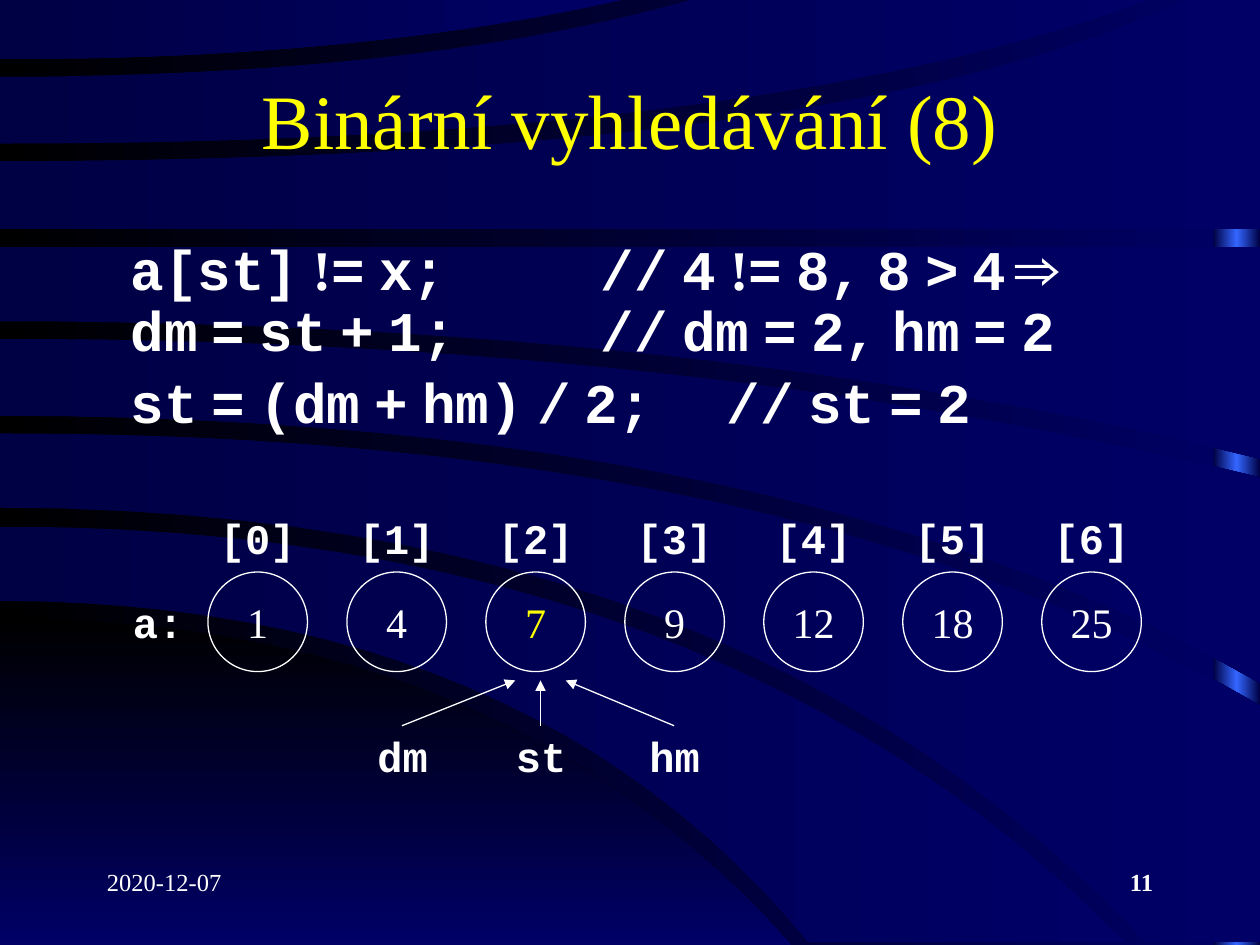
import copy

import pptx
import pptx.dml.color
import pptx.enum.shapes
import pptx.enum.text
import pptx.oxml
import pptx.oxml.ns
import pptx.util

COLOURS = {"black": "000000", "navy": "000066", "dusk": "000044",
           "glow": "3366FF", "white": "FFFFFF", "yellow": "FFFF00"}
SERIF, MONO = "Times New Roman", "Courier New"
COLUMNS, ROWS = 100, 75
ALIGN = pptx.enum.text.PP_ALIGN
ANCHOR = pptx.enum.text.MSO_ANCHOR
SHAPE = pptx.enum.shapes.MSO_SHAPE
qn = pptx.oxml.ns.qn


def colour(name):
    return pptx.dml.color.RGBColor.from_string(COLOURS[name])


def curve(start, bend, right, end, steps=24):
    """Points of a curve leaving the left edge level at row start, with its
    control point at column bend, and ending at column right, row end."""
    shares = [step / steps for step in range(steps + 1)]
    return [(2 * t * (1 - t) * bend + t * t * right, start + t * t * (end - start))
            for t in shares]


class SlideBuilder:
    """Draws on one slide; all lengths are columns and rows of the grid."""

    def __init__(self, deck):
        self.deck = deck
        self.page = deck.slides.add_slide(deck.slide_layouts[6])

    def place(self, *lengths):
        units = (self.deck.slide_width / COLUMNS, self.deck.slide_height / ROWS)
        return [round(length * units[i % 2]) for i, length in enumerate(lengths)]

    def gradient(self, fill, names, angle=0):
        fill.gradient()
        fill.gradient_angle = angle
        for position, (stop, name) in enumerate(zip(fill.gradient_stops, names)):
            stop.color.rgb = colour(name)
            stop.position = position

    def strip(self, at, edge, middle):
        shape = self.page.shapes.add_shape(SHAPE.RECTANGLE, *self.place(*at))
        shape.shadow.inherit = False
        shape.line.fill.background()
        self.gradient(shape.fill, (edge, edge))
        stops = shape._element.spPr.find(".//" + qn("a:gsLst"))
        stops.insert(1, copy.deepcopy(stops[0]))
        centre = shape.fill.gradient_stops[1]
        centre.position = 0.5
        centre.color.rgb = colour(middle)

    def band(self, upper, lower, names=("dusk", "navy"), angle=0):
        top, bottom = curve(*upper), curve(*lower)
        ends = sorted([top[-1], bottom[-1]])
        corner = (ends[1][0], ends[0][1])
        spots = [self.place(*point) for point in [*top, corner, *reversed(bottom)]]
        outline = self.page.shapes.build_freeform(*spots[0], scale=1.0)
        outline.add_line_segments(spots[1:], close=True)
        shape = outline.convert_to_shape()
        shape.shadow.inherit = False
        shape.line.fill.background()
        self.gradient(shape.fill, names, angle)

    def style(self, para, size, font, ink="white", bold=False, align=ALIGN.LEFT):
        para.alignment = align
        para.font.size = pptx.util.Pt(size)
        para.font.name = font
        para.font.bold = bold
        para.font.color.rgb = colour(ink)

    def text(self, at, words, size, font, anchor=ANCHOR.MIDDLE, **look):
        box = self.page.shapes.add_textbox(*self.place(*at))
        frame = box.text_frame
        frame.word_wrap = True
        frame.vertical_anchor = anchor
        frame.text = words
        self.style(frame.paragraphs[0], size, font, **look)

    def label(self, at, words):
        self.text(at, words, 24, MONO, bold=True, align=ALIGN.CENTER)

    def circle(self, at, words, ink):
        shape = self.page.shapes.add_shape(SHAPE.OVAL, *self.place(*at))
        shape.shadow.inherit = False
        shape.fill.background()
        shape.line.color.rgb = colour("white")
        shape.line.width = pptx.util.Pt(0.75)
        frame = shape.text_frame
        frame.margin_left = frame.margin_right = 0
        frame.vertical_anchor = ANCHOR.MIDDLE
        frame.text = words
        self.style(frame.paragraphs[0], 24, SERIF, ink, align=ALIGN.CENTER)

    def code(self, at, blocks):
        """Each block is (tab stop in inches, lines); inner spaces are narrow."""
        box = self.page.shapes.add_textbox(*self.place(*at))
        frame = box.text_frame
        frame.word_wrap = True
        for index, (stop, lines) in enumerate(blocks):
            para = frame.add_paragraph() if index else frame.paragraphs[0]
            self.style(para, 32, MONO, bold=True)
            para.line_spacing = pptx.util.Pt(35)
            para.space_before = pptx.util.Pt(6)
            tabs = pptx.oxml.parse_xml(
                '<a:tabLst xmlns:a="http://schemas.openxmlformats.org/drawingml/2006/main">'
                f'<a:tab pos="{pptx.util.Inches(stop)}" algn="l"/></a:tabLst>')
            para._p.pPr.find(qn("a:defRPr")).addprevious(tabs)
            for number, line in enumerate(lines):
                if number:
                    para.add_line_break()
                first, *others = line.split(" ")
                self.span(para, " " + first, MONO)
                for word in others:
                    mark = "!" if word.startswith("!") else ""
                    self.span(para, " " + mark, SERIF)
                    self.span(para, word[len(mark):], MONO)

    def span(self, para, words, font):
        span = para.add_run()
        span.text = words
        span.font.name = font

    def arrow(self, start, end):
        line = self.page.shapes.add_connector(
            pptx.enum.shapes.MSO_CONNECTOR.STRAIGHT, *self.place(*start, *end))
        line.line.color.rgb = colour("white")
        line.line.width = pptx.util.Pt(0.75)
        stroke = line.line._get_or_add_ln()
        stroke.append(stroke.makeelement(qn("a:tailEnd"), {"type": "triangle"}))
        effects = line._element.spPr
        effects.append(effects.makeelement(qn("a:effectLst"), {}))


# Upper and lower curve of each background band, from the bottom up
CORNER = ((49.1, 40, 62.8, 75), (75, 31, 62.8, 75))
BANDS = [((41.8, 57, 89.3, 74.8), (47.7, 42, 64.2, 74.8)),
         ((34.4, 63, 100, 56), (40.3, 59, 90.9, 74.8)),
         ((26.9, 55, 100, 37.9), (33, 63, 100, 54.2)),
         ((19.6, 50, 100, 19.6), (25.5, 56, 100, 36.4)),
         ((12.8, 68, 94.3, -0.2), (18.2, 50, 100, 18.2)),
         ((6.1, 34, 55.6, -0.2), (11.4, 61, 91.7, -0.2)),
         ((-0.2, 25, 50.1, -0.2), (4.7, 29, 50.1, -0.2))]
CODE = [(4, ["a[st] != x;\t// 4 != 8, 8 > 4 ⇒", "dm = st + 1;\t// dm = 2, hm = 2"]),
        (5, ["st = (dm + hm) / 2;\t// st = 2"])]
VALUES = [1, 4, 7, 9, 12, 18, 25]
MIDDLE = 2
# Pointer name: left of its label, column of its arrow tip
POINTERS = {"dm": (27.6, 40.9), "st": (38.6, 42.9), "hm": (49.2, 44.9)}


def main():
    deck = pptx.Presentation()
    deck.slide_width, deck.slide_height = pptx.util.Inches(10), pptx.util.Inches(7.5)
    slide = SlideBuilder(deck)

    # Backdrop
    slide.gradient(slide.page.background.fill, ("black", "navy"))
    slide.strip((96.3, 0, 3.7, 75), "dusk", "glow")
    slide.band(*CORNER, ("black", "navy"), 270)
    for upper, lower in BANDS:
        slide.band(upper, lower)

    # Title, code and footer
    slide.text((7.5, 4.8, 85, 9.2), "Binární vyhledávání (8)", 44, SERIF,
               ink="yellow", align=ALIGN.CENTER)
    slide.code((6.7, 18.6, 87.5, 16.5), CODE)
    slide.text((7.5, 68.3, 20.8, 5), "2020-12-07", 14, SERIF, ANCHOR.TOP)
    slide.text((71.7, 68.3, 20.8, 5), "11", 14, SERIF, ANCHOR.TOP,
               bold=True, align=ALIGN.RIGHT)

    # Array with its indices
    slide.label((9, 45.4, 7.1, 7.9), "a:")
    for index, value in enumerate(VALUES):
        left = 16.5 + 11.03 * index
        slide.circle((left, 45.4, 7.9, 7.9), str(value),
                     "yellow" if index == MIDDLE else "white")
        slide.label((left - 0.4, 38.7, 8.7, 7.9), f"[{index}]")

    # Pointers to the middle element
    for name, (left, tip) in POINTERS.items():
        slide.label((left, 56, 8.7, 7.9), name)
        slide.arrow((left + 4.3, 57.6), (tip, 54))

    deck.save("out.pptx")


if __name__ == "__main__":
    main()
